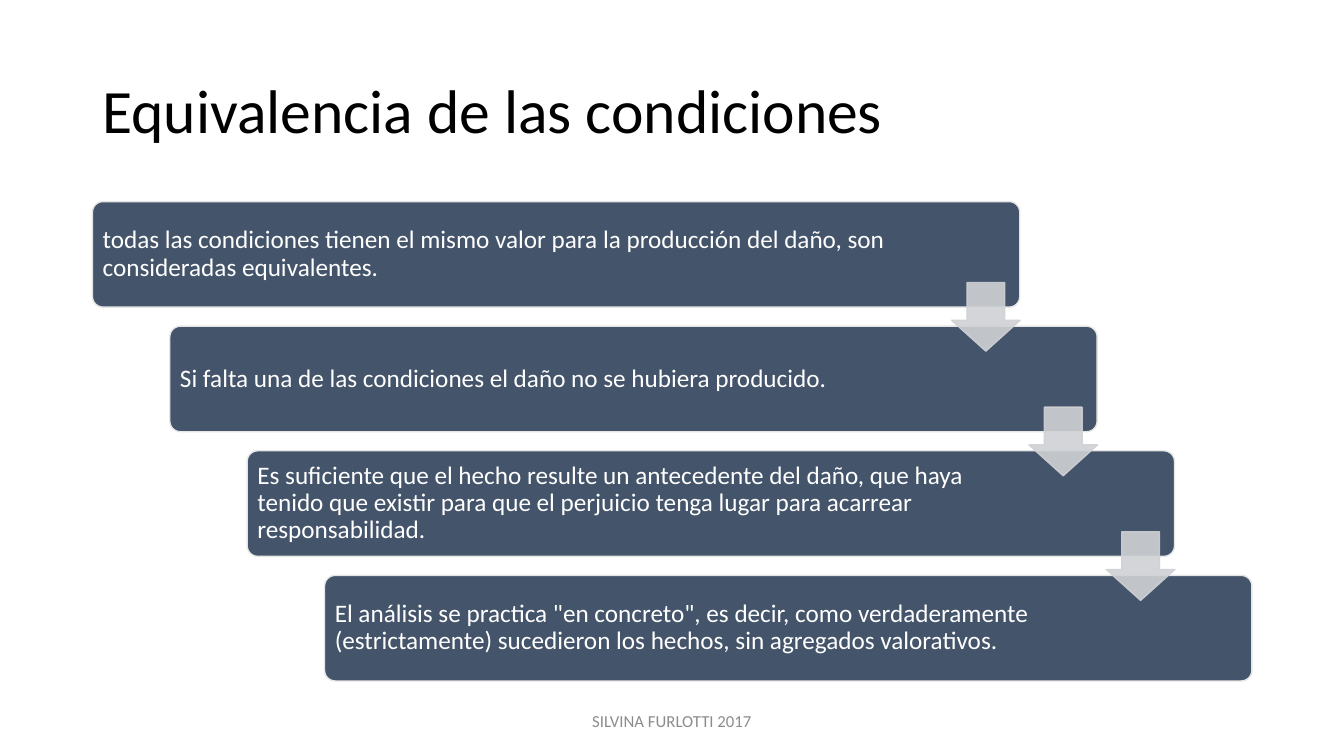
from lxml.etree import SubElement
from pptx import Presentation
from pptx.dml.color import RGBColor
from pptx.enum.shapes import MSO_SHAPE
from pptx.enum.text import MSO_ANCHOR, PP_ALIGN
from pptx.oxml.ns import qn
from pptx.util import Cm, Pt

BLACK = RGBColor(0x00, 0x00, 0x00)
WHITE = RGBColor(0xFF, 0xFF, 0xFF)
SLATE = RGBColor(0x44, 0x54, 0x6A)
PALE = RGBColor(0xE7, 0xE6, 0xE6)
SILVER = RGBColor(0xCF, 0xD1, 0xD4)
GREY = RGBColor(0x8C, 0x8C, 0x8C)

# Each condition with the right margin (cm) of its text
CONDITIONS = [
    ("todas las condiciones tienen el mismo valor para la producción del daño, "
     "son consideradas equivalentes.", 3.12),
    ("Si falta una de las condiciones el daño no se hubiera producido.", 3.84),
    ("Es suficiente que el hecho resulte un antecedente del daño, que haya tenido "
     "que existir para que el perjuicio tenga lugar para acarrear responsabilidad.", 3.84),
    ('El análisis se practica "en concreto", es decir, como verdaderamente '
     "(estrictamente) sucedieron los hechos, sin agregados valorativos.", 3.84),
]
LEFT, TOP = 2.33, 5.08
STEP_X, STEP_Y = 1.95, 3.14
BAR_WIDTH, BAR_HEIGHT = 23.37, 2.66
ARROW_SIZE, ARROW_DX, ARROW_DY = 1.73, 21.65, 2.04


def write(holder, text, size, color, align=PP_ALIGN.LEFT, spacing=0.9):
    frame = holder.text_frame
    frame.word_wrap = True
    frame.vertical_anchor = MSO_ANCHOR.MIDDLE
    paragraph = frame.paragraphs[0]
    paragraph.alignment = align
    paragraph.line_spacing = spacing
    run = paragraph.add_run()
    run.text = text
    run.font.color.rgb = color
    for name, value in {"name": "Calibri", "size": Pt(size)}.items():
        setattr(run.font, name, value)


def add_block(kind, left, top, width, height, fill, line, adjustments):
    block = slide.shapes.add_shape(kind, Cm(left), Cm(top), Cm(width), Cm(height))
    block.shadow.inherit = False
    block.fill.solid()
    block.fill.fore_color.rgb = fill
    block.line.color.rgb = line
    block.line.width = Pt(1)
    for index, value in enumerate(adjustments):
        block.adjustments[index] = value
    return block


deck = Presentation()
deck.slide_width, deck.slide_height = Cm(33.87), Cm(19.05)
slide = deck.slides.add_slide(deck.slide_layouts[6])

heading = slide.shapes.add_textbox(Cm(LEFT), Cm(1.02), Cm(29.21), Cm(3.68))
write(heading, "Equivalencia de las condiciones", 44, BLACK)

for step, (condition, right_margin) in enumerate(CONDITIONS):
    bar = add_block(MSO_SHAPE.ROUNDED_RECTANGLE, LEFT + step * STEP_X, TOP + step * STEP_Y,
                    BAR_WIDTH, BAR_HEIGHT, SLATE, PALE, [0.1])
    margins = {"margin_left": 0.18, "margin_top": 0.18,
               "margin_bottom": 0.18, "margin_right": right_margin}
    for side, margin in margins.items():
        setattr(bar.text_frame, side, Cm(margin))
    write(bar, condition, 18, WHITE)

# Arrows lie over the bars, one between each pair
for step in range(len(CONDITIONS) - 1):
    arrow = add_block(MSO_SHAPE.DOWN_ARROW, LEFT + ARROW_DX + step * STEP_X,
                      TOP + ARROW_DY + step * STEP_Y, ARROW_SIZE, ARROW_SIZE,
                      SILVER, SILVER, [0.55, 0.45])
    for color in arrow.element.spPr.iter(qn("a:srgbClr")):
        SubElement(color, qn("a:alpha"), val="90000")

footer = slide.shapes.add_textbox(Cm(11.22), Cm(17.66), Cm(11.43), Cm(1.02))
write(footer, "SILVINA FURLOTTI 2017", 12, GREY, PP_ALIGN.CENTER, 1.0)

deck.save("out.pptx")
